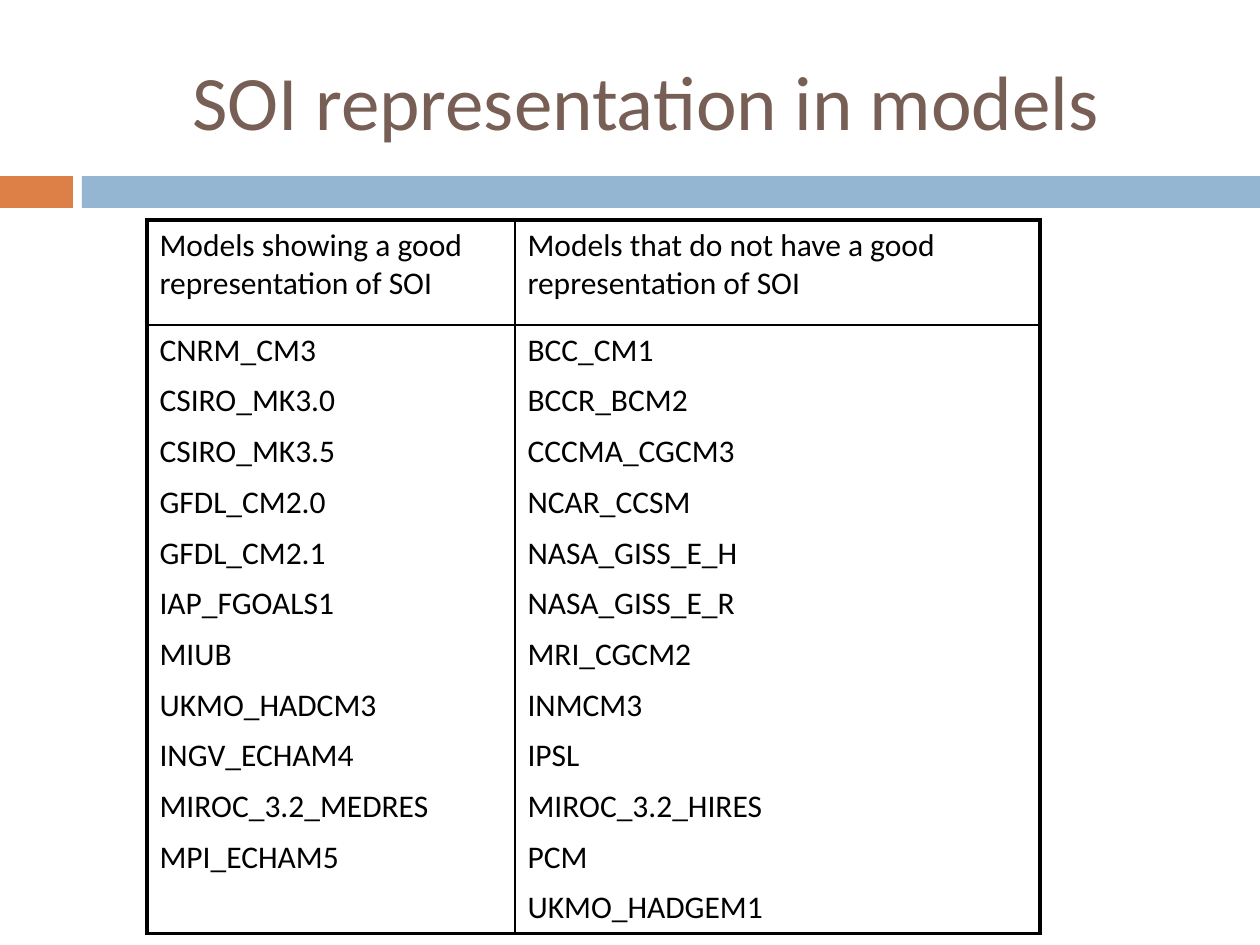
import pptx
import pptx.util
import pptx.dml.color
import pptx.enum.shapes
import pptx.enum.text
import pptx.oxml.ns
import lxml.etree

RGB = pptx.dml.color.RGBColor
BLACK = RGB(0x00, 0x00, 0x00)
BROWN = RGB(0x77, 0x5F, 0x55)
ORANGE = RGB(0xDD, 0x80, 0x47)
BLUE = RGB(0x94, 0xB6, 0xD2)

HEADS = ["Models showing a good representation of SOI",
         "Models that do not have a good representation of SOI"]
GOOD = ["CNRM_CM3", "CSIRO_MK3.0", "CSIRO_MK3.5", "GFDL_CM2.0", "GFDL_CM2.1",
        "IAP_FGOALS1", "MIUB", "UKMO_HADCM3", "INGV_ECHAM4",
        "MIROC_3.2_MEDRES", "MPI_ECHAM5"]
POOR = ["BCC_CM1", "BCCR_BCM2", "CCCMA_CGCM3", "NCAR_CCSM", "NASA_GISS_E_H",
        "NASA_GISS_E_R", "MRI_CGCM2", "INMCM3", "IPSL", "MIROC_3.2_HIRES",
        "PCM", "UKMO_HADGEM1"]


def px(num):
    return pptx.util.Emu(round(num * 914400 / 126))


class Deck:
    font = "Calibri"
    thick = 2.25
    thin = 1

    def __init__(self, wide, high):
        self.file = pptx.Presentation()
        self.file.slide_width = px(wide)
        self.file.slide_height = px(high)
        self.slide = self.file.slides.add_slide(self.file.slide_layouts[5])

    def style(self, para, size, color):
        para.font.name = self.font
        para.font.size = pptx.util.Pt(size)
        para.font.color.rgb = color

    def bar(self, left, top, wide, high, color):
        kind = pptx.enum.shapes.MSO_SHAPE.RECTANGLE
        shape = self.slide.shapes.add_shape(
            kind, px(left), px(top), px(wide), px(high))
        shape.shadow.inherit = False
        shape.fill.solid()
        shape.fill.fore_color.rgb = color
        shape.line.fill.background()

    def title(self, text, left, top, wide, high):
        shape = self.slide.shapes.title
        shape.left, shape.top = px(left), px(top)
        shape.width, shape.height = px(wide), px(high)
        frame = shape.text_frame
        frame.text = text
        frame.vertical_anchor = pptx.enum.text.MSO_ANCHOR.MIDDLE
        para = frame.paragraphs[0]
        para.alignment = pptx.enum.text.PP_ALIGN.CENTER
        self.style(para, 44, BROWN)

    def edge(self, cell, side, width):
        name = pptx.oxml.ns.qn
        props = cell._tc.get_or_add_tcPr()
        line = lxml.etree.SubElement(
            props, name("a:ln" + side), w=str(pptx.util.Pt(width)))
        fill = lxml.etree.SubElement(line, name("a:solidFill"))
        lxml.etree.SubElement(fill, name("a:srgbClr"), val=str(BLACK))

    def cell(self, cell, lines, outer):
        for side in "LRTB":
            self.edge(cell, side, self.thick if side in outer else self.thin)
        cell.fill.background()
        cell.text = "\n".join(lines)
        for para in cell.text_frame.paragraphs:
            para.space_before = pptx.util.Pt(7)
            self.style(para, 18, BLACK)

    def table(self, rows, left, top, wides, highs):
        table = self.slide.shapes.add_table(
            len(highs), len(wides), px(left), px(top),
            px(sum(wides)), px(sum(highs))).table
        table.first_row = False
        table.horz_banding = False
        for col, wide in zip(table.columns, wides):
            col.width = px(wide)
        for row, high in zip(table.rows, highs):
            row.height = px(high)
        for r, row in enumerate(rows):
            for c, lines in enumerate(row):
                outer = ("T" if r == 0 else "") + ("L" if c == 0 else "")
                outer += "B" if r == len(highs) - 1 else ""
                outer += "R" if c == len(wides) - 1 else ""
                self.cell(table.cell(r, c), lines, outer)


def main():
    deck = Deck(1260, 945)
    deck.bar(0, 176, 73, 32, ORANGE)
    deck.bar(82, 176, 1178, 32, BLUE)
    deck.title("SOI representation in models", 84, 32, 1124, 136)
    deck.table([[[head] for head in HEADS], [GOOD, POOR]],
               147, 220, [368, 525], [105, 602])
    deck.file.save("out.pptx")


if __name__ == "__main__":
    main()
